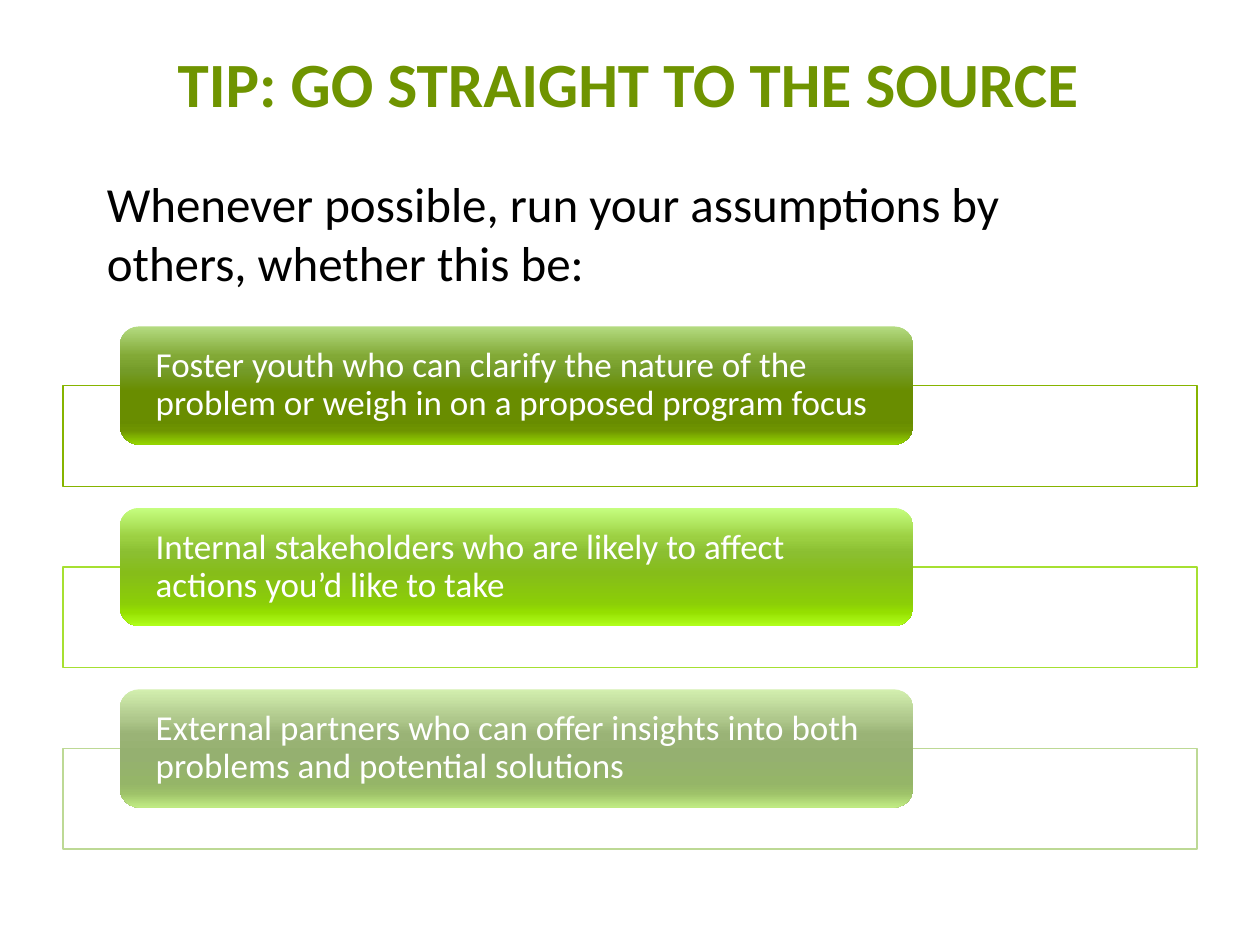
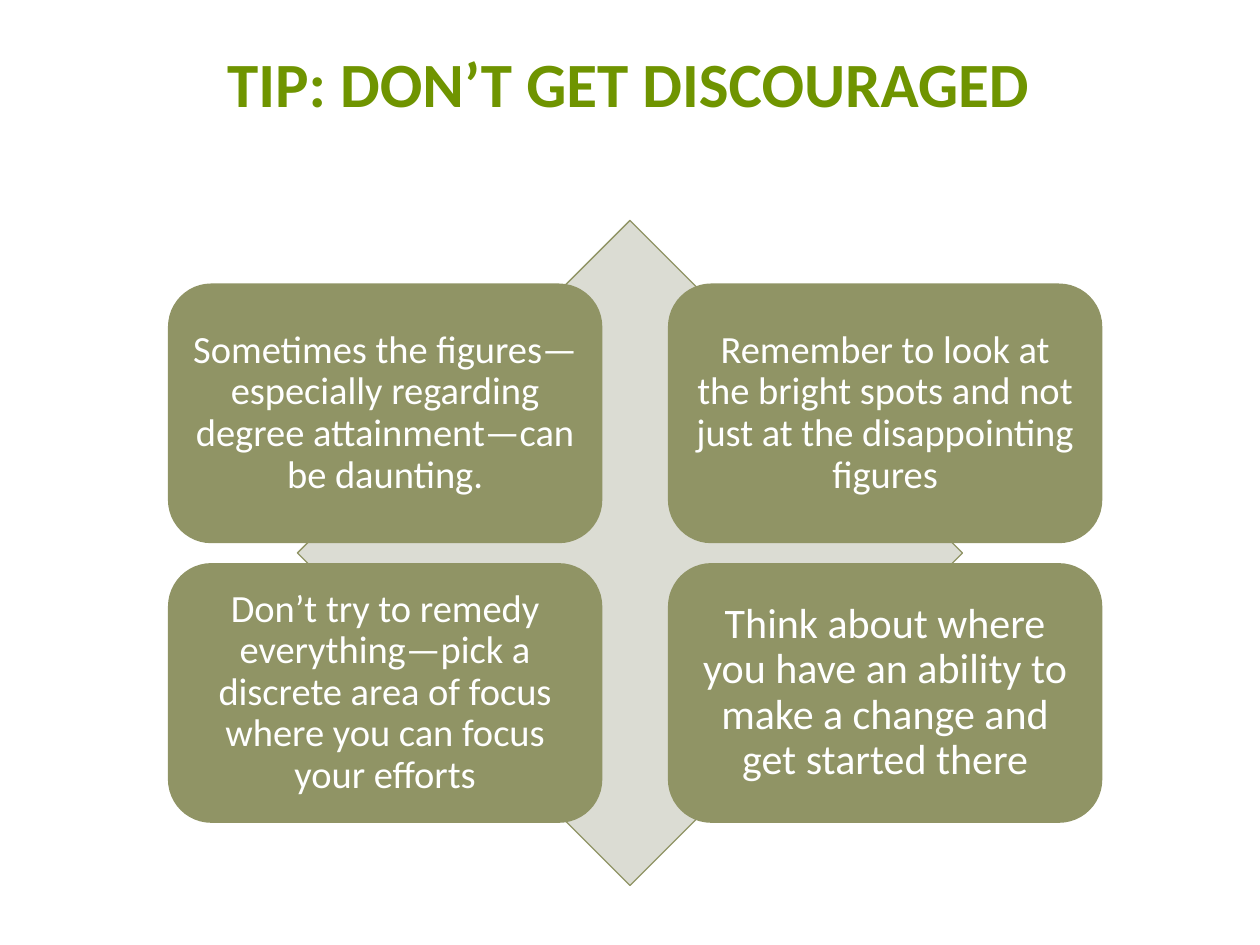
from dataclasses import dataclass

from lxml import etree
from pptx import Presentation
from pptx.dml import color
from pptx.enum import shapes, text
from pptx.oxml import ns
from pptx.util import Pt

# Shared look
FONT = "Calibri"
TITLE_GREEN, OLIVE, PALE_OLIVE = "6F9400", "909465", "DBDCD3"
WHITE, BLACK = "FFFFFF", "000000"
GRADIENT_STOPS = (0, 25, 38, 55, 80, 88, 100)
SHAPE = shapes.MSO_SHAPE
LEFT, CENTER = text.PP_ALIGN.LEFT, text.PP_ALIGN.CENTER


@dataclass
class Box:
    left: float
    top: float
    width: float
    height: float

    def place(self) -> tuple:
        return tuple(Pt(v) for v in (self.left, self.top, self.width, self.height))


@dataclass
class Audience:
    wording: str
    frame_line: str
    gradient: tuple


@dataclass
class Advice:
    wording: str
    size: float = 22
    margin: float = 6.6


AUDIENCES = (
    Audience("Foster youth who can clarify the nature of the problem or weigh in on a proposed program focus",
             "86B400", ("B4DB81", "82A936", "749B28", "698D00", "688C00", "6E9300", "96D700")),
    Audience("Internal stakeholders who are likely to affect actions you’d like to take",
             "A6E031", ("C5FE7F", "9CD042", "8BBF31", "86BD19", "8BCD08", "95DF00", "B0FF1B")),
    Audience("External partners who can offer insights into both problems and potential solutions",
             "BDD995", ("D3EFAF", "AFC88C", "9AB376", "95B070", "95B568", "9EC269", "C1EC84")),
)
ADVICE = (
    Advice("Sometimes the figures—especially regarding degree attainment—can be daunting."),
    Advice("Remember to look at the bright spots and not just at the disappointing figures"),
    Advice("Don’t try to remedy everything—pick a discrete area of focus where you can focus your efforts"),
    Advice("Think about where you have an ability to make a change and get started there",
           size=24, margin=7.2),
)


def rgb(hex_code: str) -> color.RGBColor:
    return color.RGBColor.from_string(hex_code)


def write(holder, wording: str, size: float, ink: str, align=LEFT, bold: bool = False,
          spacing: float = 1.0, anchor=text.MSO_ANCHOR.MIDDLE) -> None:
    frame = holder.text_frame
    frame.text = wording
    frame.word_wrap = True
    frame.vertical_anchor = anchor
    paragraph = frame.paragraphs[0]
    paragraph.alignment = align
    paragraph.line_spacing = spacing
    font = paragraph.runs[0].font
    font.name, font.size, font.bold = FONT, Pt(size), bold
    font.color.rgb = rgb(ink)


def set_margins(holder, sides: float, ends: float) -> None:
    frame = holder.text_frame
    frame.margin_left = frame.margin_right = Pt(sides)
    frame.margin_top = frame.margin_bottom = Pt(ends)


def draw(slide, kind, box: Box, fill: str, line: str = ""):
    shape = slide.shapes.add_shape(kind, *box.place())
    shape.shadow.inherit = False
    shape.fill.solid()
    shape.fill.fore_color.rgb = rgb(fill)
    if line:
        shape.line.color.rgb = rgb(line)
        shape.line.width = Pt(0.75)
    else:
        shape.line.fill.background()
    return shape


def shade(shape, colours: tuple) -> None:
    """Fill with a downward gradient that has one colour per shared stop."""
    shape.fill.gradient()
    shape.fill.gradient_angle = 270
    stops = shape.element.spPr.find(ns.qn("a:gradFill")).find(ns.qn("a:gsLst"))
    for stop in list(stops):
        stops.remove(stop)
    for percent, colour in zip(GRADIENT_STOPS, colours):
        stop = etree.SubElement(stops, ns.qn("a:gs"), pos=str(percent * 1000))
        etree.SubElement(stop, ns.qn("a:srgbClr"), val=colour)


def add_titled_slide(deck, wording: str):
    slide = deck.slides.add_slide(deck.slide_layouts[5])
    title = slide.shapes.title
    title.left, title.top, title.width, title.height = Box(34, 18, 650, 57.6).place()
    write(title, wording, 36, TITLE_GREEN, CENTER, bold=True)
    return slide


def build_source_slide(deck) -> None:
    slide = add_titled_slide(deck, "TIP: GO STRAIGHT TO THE SOURCE")
    # One open frame with a gradient label per audience
    for row, audience in enumerate(AUDIENCES):
        top = 186.5 + row * 103.68
        draw(slide, SHAPE.RECTANGLE, Box(36, top + 33.8, 648, 57.6), WHITE, audience.frame_line)
        label = draw(slide, SHAPE.ROUNDED_RECTANGLE, Box(68.4, top, 453.6, 67.6), WHITE)
        shade(label, audience.gradient)
        write(label, audience.wording, 20, WHITE, spacing=0.9)
        set_margins(label, 17.3, 0)
    # Lead-in sentence
    intro = slide.shapes.add_textbox(*Box(54, 95.8, 582, 75).place())
    write(intro, "Whenever possible, run your assumptions by others, whether this be:",
          28, BLACK, anchor=text.MSO_ANCHOR.TOP)


def build_encouragement_slide(deck) -> None:
    slide = add_titled_slide(deck, "TIP: DON’T GET DISCOURAGED")
    draw(slide, SHAPE.DIAMOND, Box(170, 126, 380, 380), PALE_OLIVE, OLIVE)
    # Two by two cards over the diamond
    for index, advice in enumerate(ADVICE):
        row, column = divmod(index, 2)
        box = Box(96 + column * 285.7, 162 + row * 159.8, 248.2, 148.4)
        card = draw(slide, SHAPE.ROUNDED_RECTANGLE, box, OLIVE)
        write(card, advice.wording, advice.size, WHITE, CENTER, spacing=0.9)
        set_margins(card, advice.margin, advice.margin)


def main() -> None:
    deck = Presentation()
    deck.slide_width, deck.slide_height = Pt(720), Pt(540)
    build_source_slide(deck)
    build_encouragement_slide(deck)
    deck.save("out.pptx")


if __name__ == "__main__":
    main()
